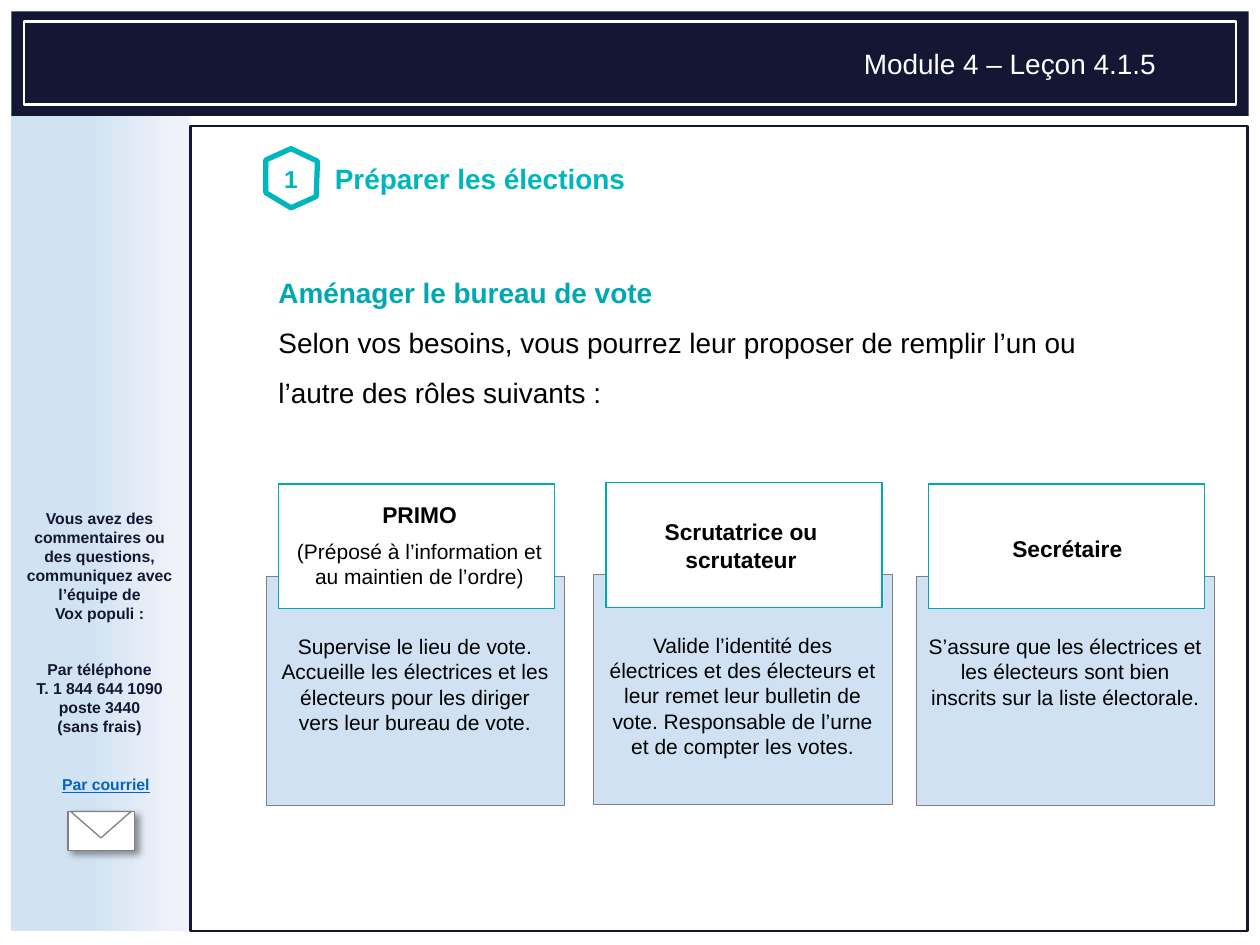
from copy import deepcopy
from dataclasses import dataclass

from lxml import etree
from pptx import Presentation
from pptx.dml.color import RGBColor
from pptx.enum.shapes import MSO_SHAPE
from pptx.enum.text import MSO_ANCHOR, MSO_AUTO_SIZE, PP_ALIGN
from pptx.oxml.ns import qn
from pptx.util import Inches, Pt

RECTANGLE = MSO_SHAPE.RECTANGLE
TRIANGLE = MSO_SHAPE.ISOSCELES_TRIANGLE
LEFT, CENTER = PP_ALIGN.LEFT, PP_ALIGN.CENTER
TOP, MIDDLE = MSO_ANCHOR.TOP, MSO_ANCHOR.MIDDLE
NO_FIT = MSO_AUTO_SIZE.NONE
TITLE_ONLY = 5


@dataclass(frozen=True)
class TextStyle:
    size: float
    color: str
    bold: bool = False
    underline: bool = False


@dataclass(frozen=True)
class Theme:
    font: str = "Arial"
    navy: str = "141733"
    white: str = "FFFFFF"
    gray: str = "808080"
    teal: str = "00A8B0"
    bright_teal: str = "00B6BD"
    card: str = "CFE1F2"
    sidebar: tuple = ((0.06, "F1F2F9"), (0.56, "D1E3F3"), (0.99, "CEE1F2"))
    module: TextStyle = TextStyle(16, "FFFFFF")
    section: TextStyle = TextStyle(16, "00B6BD", True)
    number: TextStyle = TextStyle(14, "00B6BD", True)
    heading: TextStyle = TextStyle(16, "00A8B0", True)
    intro: TextStyle = TextStyle(16, "000000")
    role: TextStyle = TextStyle(13, "000000", True)
    body: TextStyle = TextStyle(12, "000000")
    contact: TextStyle = TextStyle(9, "141733", True)
    link: TextStyle = TextStyle(9, "0563C1", True, True)


class SlideBuilder:
    def __init__(self, slide, theme):
        self.slide = slide
        self.theme = theme

    def format_run(self, span, style):
        span.font.name = self.theme.font
        span.font.size = Pt(style.size)
        span.font.bold = style.bold
        span.font.underline = style.underline
        span.font.color.rgb = RGBColor.from_string(style.color)

    def paint(self, shape, fill, line, width):
        shape.shadow.inherit = False
        if fill:
            shape.fill.solid()
            shape.fill.fore_color.rgb = RGBColor.from_string(fill)
        else:
            shape.fill.background()
        if line:
            shape.line.color.rgb = RGBColor.from_string(line)
            shape.line.width = Pt(width)
        else:
            shape.line.fill.background()

    def shape(self, area, fill=None, line=None, width=0.75, kind=RECTANGLE):
        shape = self.slide.shapes.add_shape(kind, *map(Inches, area))
        self.paint(shape, fill, line, width)
        return shape

    def gradient(self, area, stops):
        shape = self.shape(area)
        shape.fill.gradient()
        shape.fill.gradient_angle = 180
        stop_list = shape._element.spPr.find(qn("a:gradFill")).find(qn("a:gsLst"))
        while len(stop_list) < len(stops):
            stop_list.append(deepcopy(stop_list[0]))
        for stop, (position, color) in zip(shape.fill.gradient_stops, stops):
            stop.position = position
            stop.color.rgb = RGBColor.from_string(color)

    def polygon(self, points, fill, line, width):
        corners = [(Inches(x), Inches(y)) for x, y in points]
        builder = self.slide.shapes.build_freeform(*corners[0])
        builder.add_line_segments(corners[1:], close=True)
        self.paint(builder.convert_to_shape(), fill, line, width)

    def drop_shadow(self, shape):
        effects = shape._element.spPr.find(qn("a:effectLst"))
        shadow = etree.SubElement(
            effects, qn("a:outerShdw"), blurRad=str(Pt(4)), dist=str(Pt(3)),
            dir="2700000", algn="tl", rotWithShape="0")
        color = etree.SubElement(shadow, qn("a:srgbClr"), val="000000")
        etree.SubElement(color, qn("a:alpha"), val="40000")

    def fill_frame(self, frame, paragraphs, align, anchor, gap=0):
        frame.word_wrap = True
        frame.vertical_anchor = anchor
        frame.text = "\n".join(text for text, _ in paragraphs)
        for index, (para, (_, style)) in enumerate(zip(frame.paragraphs, paragraphs)):
            para.alignment = align
            if index:
                para.space_before = Pt(gap)
            for span in para.runs:
                self.format_run(span, style)

    def text(self, area, paragraphs, align=CENTER, anchor=MIDDLE, gap=0, wrap=True):
        box = self.slide.shapes.add_textbox(*map(Inches, area))
        self.fill_frame(box.text_frame, paragraphs, align, anchor, gap)
        box.text_frame.word_wrap = wrap

    def title(self, area, heading, intro):
        title = self.slide.shapes.title
        title.left, title.top, title.width, title.height = map(Inches, area)
        frame = title.text_frame
        frame.auto_size = NO_FIT
        self.fill_frame(frame, [(f"{heading}\v{intro}", self.theme.intro)], LEFT, TOP)
        para = frame.paragraphs[0]
        para.line_spacing = 1.5
        self.format_run(para.runs[0], self.theme.heading)

    def card(self, left, top, label_area, label, duty):
        theme = self.theme
        body = self.shape((left, top, 2.37, 1.82), theme.card, theme.gray, 0.25)
        body.text_frame.margin_top = Inches(0.46)
        self.fill_frame(body.text_frame, [(duty, theme.body)], CENTER, TOP)
        self.shape((left + 0.1, top - 0.73, 2.19, 0.99), theme.white, theme.teal)
        self.text(label_area, label, gap=6)

    def envelope(self):
        theme = self.theme
        back = self.shape((0.54, 6.44, 0.53, 0.31), theme.white, theme.gray)
        self.drop_shadow(back)
        flap = self.shape((0.56, 6.44, 0.48, 0.21), theme.white, theme.gray, kind=TRIANGLE)
        flap.rotation = 180


def main():
    theme = Theme()
    deck = Presentation()
    deck.slide_width, deck.slide_height = Inches(10), Inches(7.5)
    page = SlideBuilder(deck.slides.add_slide(deck.slide_layouts[TITLE_ONLY]), theme)

    page.gradient((0.09, 0.88, 1.41, 6.51), theme.sidebar)
    page.shape((1.51, 1, 8.39, 6.39), line=theme.navy, width=1.5)
    page.shape((0.09, 0.09, 9.82, 0.83), theme.navy)
    page.shape((0.19, 0.17, 9.62, 0.66), line=theme.white, width=1.5)
    page.text((6.73, 0.32, 2.57, 0.37), [("Module 4 – Leçon 4.1.5", theme.module)], anchor=TOP)

    page.text((0.09, 3.99, 1.4, 1.92), [
        ("Vous avez des commentaires ou des questions, communiquez avec "
         "l’équipe de\vVox populi :", theme.contact),
        ("Par téléphone\vT. 1 844 644 1090\vposte 3440\v(sans frais)", theme.contact),
    ], anchor=TOP, gap=21)
    page.text((0.39, 6.1, 0.9, 0.25), [("Par courriel", theme.link)], anchor=TOP, wrap=False)
    page.envelope()

    hexagon = [(2.31, 1.18), (2.52, 1.28), (2.51, 1.56),
               (2.31, 1.65), (2.11, 1.53), (2.11, 1.27)]
    page.polygon(hexagon, theme.white, theme.bright_teal, 3)
    page.text((2.14, 1.25, 0.34, 0.34), [("1", theme.number)])
    page.text((2.56, 1.25, 3, 0.33), [("Préparer les élections", theme.section)], LEFT)
    page.title(
        (2.11, 2, 7.19, 1.43), "Aménager le bureau de vote",
        "Selon vos besoins, vous pourrez leur proposer de remplir l’un ou "
        "l’autre des rôles suivants :")

    cards = [
        (2.11, 4.57, (2.21, 3.83, 2.24, 0.99),
         [("PRIMO", theme.role),
          ("(Préposé à l’information et au maintien de l’ordre)", theme.body)],
         "Supervise le lieu de vote. Accueille les électrices et les électeurs "
         "pour les diriger vers leur bureau de vote."),
        (4.71, 4.56, (4.84, 3.91, 2.08, 0.84),
         [("Scrutatrice ou scrutateur", theme.role)],
         "Valide l’identité des électrices et des électeurs et leur remet leur "
         "bulletin de vote. Responsable de l’urne et de compter les votes."),
        (7.27, 4.57, (7.44, 3.93, 2.06, 0.84),
         [("Secrétaire", theme.role)],
         "S’assure que les électrices et les électeurs sont bien inscrits sur "
         "la liste électorale."),
    ]
    for card in cards:
        page.card(*card)

    deck.save("out.pptx")


if __name__ == "__main__":
    main()
